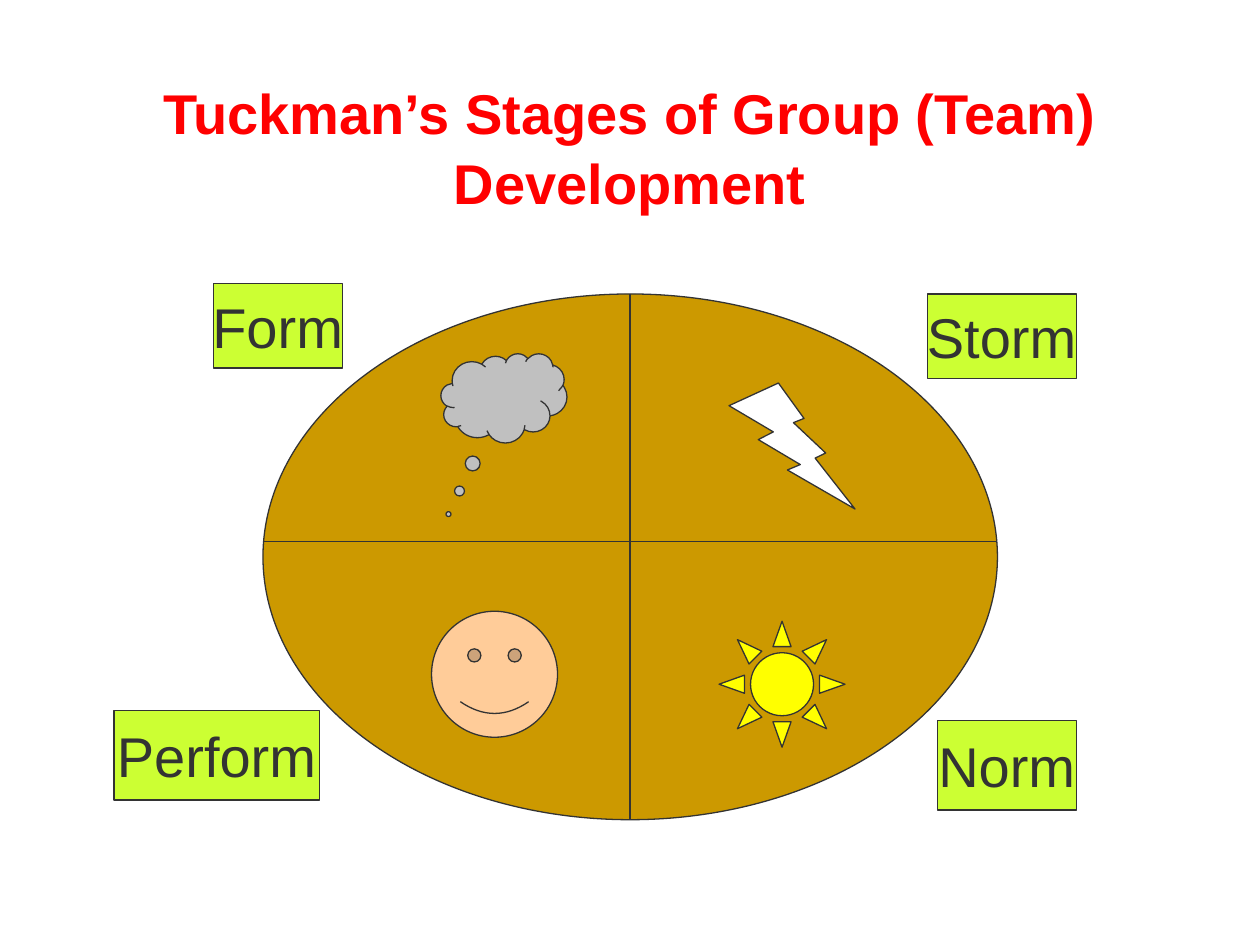
from dataclasses import dataclass

from pptx import Presentation
from pptx.dml.color import RGBColor
from pptx.enum import shapes, text
from pptx.oxml.ns import qn
from pptx.util import Pt

SHAPE = shapes.MSO_SHAPE


@dataclass(frozen=True)
class Theme:
    font: str = "Arial"
    size: int = 32
    title: str = "FF0000"
    ink: str = "333333"
    wheel: str = "CC9900"
    label: str = "CCFF33"
    cloud: str = "C0C0C0"
    bolt: str = "FFFFFF"
    sun: str = "FFFF00"
    face: str = "FFCC99"
    line: float = 0.75


THEME = Theme()


def rgb(value):
    return RGBColor.from_string(value)


def style_text(frame, color, bold=False):
    paragraph = frame.paragraphs[0]
    paragraph.alignment = text.PP_ALIGN.CENTER
    frame.vertical_anchor = text.MSO_ANCHOR.MIDDLE
    font = paragraph.runs[0].font
    font.name, font.size, font.bold = THEME.font, Pt(THEME.size), bold
    font.color.rgb = rgb(color)


def outline(line):
    line.color.rgb = rgb(THEME.ink)
    line.width = Pt(THEME.line)


def add_title(slide, wording):
    title = slide.shapes.title
    title.left, title.top, title.width, title.height = map(Pt, (36.7, 43.9, 646.6, 78.5))
    frame = title.text_frame
    frame.text = wording
    frame.word_wrap = True
    frame.margin_left = frame.margin_right = frame.margin_top = frame.margin_bottom = 0
    style_text(frame, THEME.title, bold=True)
    frame.paragraphs[0].line_spacing = 1.04


def add_figure(slide, preset, box, fill):
    figure = slide.shapes.add_shape(preset, *map(Pt, box))
    figure.shadow.inherit = False
    figure.fill.solid()
    figure.fill.fore_color.rgb = rgb(fill)
    outline(figure.line)
    return figure


def add_label(slide, wording, box):
    frame = add_figure(slide, SHAPE.FLOWCHART_PROCESS, box, THEME.label).text_frame
    frame.text = wording
    frame.word_wrap = False
    style_text(frame, THEME.ink)


def add_divider(slide, *ends):
    divider = slide.shapes.add_connector(shapes.MSO_CONNECTOR.STRAIGHT, *map(Pt, ends))
    outline(divider.line)
    properties = divider.element.spPr
    properties.append(properties.makeelement(qn("a:effectLst"), {}))


def main():
    prs = Presentation()
    prs.slide_width, prs.slide_height = Pt(720), Pt(540)
    slide = prs.slides.add_slide(prs.slide_layouts[5])
    add_title(slide, "Tuckman’s Stages of Group (Team) Development")

    # Wheel split into four stages
    add_figure(slide, SHAPE.OVAL, (150.3, 168, 419.7, 300.4), THEME.wheel)
    add_divider(slide, 150.6, 309.6, 569.6, 309.6)
    add_divider(slide, 360, 168, 360, 468.5)

    # Stage names
    for stage, box in (
        ("Form", (121.9, 162.2, 73.7, 48.1)),
        ("Storm", (529.9, 168, 85.1, 48.1)),
        ("Perform", (65.1, 406.1, 117.4, 51)),
        ("Norm", (535.6, 411.8, 79.4, 51)),
    ):
        add_label(slide, stage, box)

    # Stage symbols
    add_figure(slide, SHAPE.LIGHTNING_BOLT, (416.6, 218.9, 72, 72), THEME.bolt)
    thought = add_figure(slide, SHAPE.CLOUD_CALLOUT, (252, 202, 72, 51), THEME.cloud)
    thought.adjustments[0], thought.adjustments[1] = -0.44, 1.3
    add_figure(slide, SHAPE.SMILEY_FACE, (246.6, 349.3, 72, 72), THEME.face)
    add_figure(slide, SHAPE.SUN, (410.9, 355, 72, 72), THEME.sun)

    prs.save("out.pptx")


if __name__ == "__main__":
    main()
